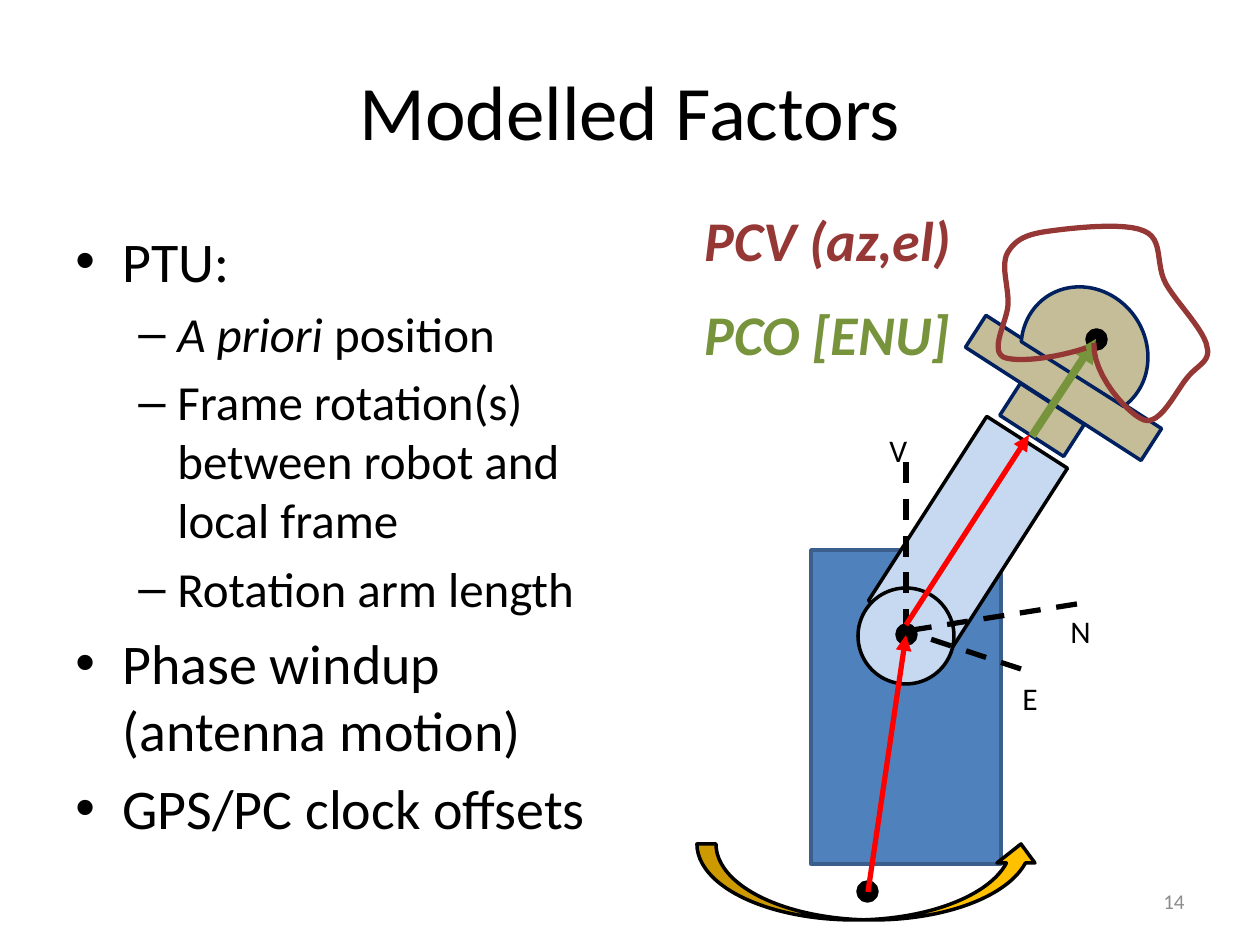
from lxml import etree
from pptx import Presentation
from pptx.dml.color import RGBColor
from pptx.enum.dml import MSO_LINE
from pptx.enum.shapes import MSO_CONNECTOR, MSO_SHAPE
from pptx.enum.text import MSO_ANCHOR, PP_ALIGN
from pptx.oxml.ns import qn
from pptx.util import Pt

PX = 914400 / 126
FONT = "Calibri"
RECT, ELLIPSE = MSO_SHAPE.RECTANGLE, MSO_SHAPE.OVAL
CHORD, TURN = MSO_SHAPE.CHORD, MSO_SHAPE.CURVED_UP_ARROW
STRAIGHT, DASH = MSO_CONNECTOR.STRAIGHT, MSO_LINE.DASH
LEFT, CENTER, RIGHT = PP_ALIGN.LEFT, PP_ALIGN.CENTER, PP_ALIGN.RIGHT
TOP, MIDDLE = MSO_ANCHOR.TOP, MSO_ANCHOR.MIDDLE

BLACK, RED, GREEN, MAROON = "000000", "FF0000", "77933C", "953735"
PALE, TAN, NAVY = "C6D9F1", "C4BD97", "002060"
DOT = 19

FACTORS = [
    (0, [("PTU:", False)]),
    (1, [("A priori", True), (" position", False)]),
    (1, [("Frame rotation(s) between robot and local frame", False)]),
    (1, [("Rotation arm length", False)]),
    (0, [("Phase windup (antenna motion)", False)]),
    (0, [("GPS/PC clock offsets", False)]),
]
LEVELS = [
    {"bullet": "•", "size": 32, "margin": 47, "hang": 47},
    {"bullet": "–", "size": 28, "margin": 102, "hang": 39},
]

ROBOT = [
    (ELLIPSE, (858, 882, DOT, DOT), 0, BLACK, BLACK),
    (RECT, (811, 550, 190, 314), 0, "4F81BD", "3A5F8C"),
    (RECT, (920, 425, 96, 219), 32.7, PALE, BLACK),
    (ELLIPSE, (858, 588, 96, 96), 0, PALE, BLACK),
    (ELLIPSE, (897, 625, DOT, DOT), 0, BLACK, BLACK),
    (TURN, (697, 844, 343, 76), 0, "FFC000", BLACK),
]
ORIGIN = (906, 631)
AXES = [
    ("V", (906, 462), (877, 425)),
    ("N", (1077, 604), (1058, 606)),
    ("E", (1021, 669), (1010, 673)),
]
ANTENNA = [
    (RECT, (959, 369, 209, 38), 32.8, TAN, NAVY),
    (RECT, (1004, 401, 76, 38), 32.8, TAN, NAVY),
    (CHORD, (1023, 285, 123, 134), 144.3, TAN, NAVY),
    (ELLIPSE, (1087, 330, DOT, DOT), 0, BLACK, BLACK),
]
VECTORS = [
    ((868, 892), (906, 635), RED, 3),
    ((906, 625), (1029, 435), RED, 3),
    ((1032, 436), (1096, 339), GREEN, 4.5),
]
PATTERN_START = (1086, 348)
PATTERN_CURVES = [
    ((1056, 358), (1017, 363), (1003, 357)),
    ((990, 349), (1007, 321), (1008, 305)),
    ((1009, 287), (1000, 265), (1008, 252)),
    ((1016, 239), (1027, 234), (1050, 231)),
    ((1072, 228), (1125, 222), (1144, 231)),
    ((1164, 239), (1155, 265), (1166, 284)),
    ((1176, 302), (1205, 331), (1207, 347)),
    ((1211, 362), (1197, 365), (1187, 378)),
    ((1176, 391), (1160, 426), (1144, 420)),
    ((1129, 415), (1092, 375), (1094, 343)),
]
CORRECTIONS = [
    ("PCV (az,el)", (692, 199, 282, 79), MAROON),
    ("PCO [ENU]", (692, 293, 282, 79), GREEN),
]


def emu(*lengths):
    return [round(length * PX) for length in lengths]


def color(code):
    return RGBColor.from_string(code)


def add_run(paragraph, words, size, code, bold=False, italic=False):
    run = paragraph.add_run()
    run.text = words
    run.font.name, run.font.size = FONT, Pt(size)
    run.font.bold, run.font.italic = bold, italic
    run.font.color.rgb = color(code)


def add_frame(box, anchor=TOP):
    frame = slide.shapes.add_textbox(*emu(*box)).text_frame
    frame.word_wrap, frame.vertical_anchor = True, anchor
    return frame


def add_label(words, box, size, code=BLACK, align=LEFT, anchor=TOP, strong=False):
    paragraph = add_frame(box, anchor).paragraphs[0]
    paragraph.alignment = align
    add_run(paragraph, words, size, code, strong, strong)
    return paragraph


def add_part(preset, box, angle, fill, outline):
    part = slide.shapes.add_shape(preset, *emu(*box))
    part.shadow.inherit = False
    part.rotation = angle
    part.fill.solid()
    part.fill.fore_color.rgb = color(fill)
    part.line.color.rgb = color(outline)
    part.line.width = Pt(2)


def add_line(start, end, code, width, dashed=False):
    connector = slide.shapes.add_connector(STRAIGHT, *emu(*start, *end))
    connector.line.color.rgb = color(code)
    connector.line.width = Pt(width)
    if dashed:
        connector.line.dash_style = DASH
    else:
        outline = connector.line._get_or_add_ln()
        etree.SubElement(outline, qn("a:tailEnd"), type="triangle")
    etree.SubElement(connector._element.spPr, qn("a:effectLst"))


def curve_points(start, curves, steps=12):
    for first, second, end in curves:
        for step in range(1, steps + 1):
            t = step / steps
            weights = ((1 - t) ** 3, 3 * t * (1 - t) ** 2, 3 * t * t * (1 - t), t ** 3)
            corners = (start, first, second, end)
            yield emu(*(sum(w * c[axis] for w, c in zip(weights, corners)) for axis in (0, 1)))
        start = end


def add_pattern():
    builder = slide.shapes.build_freeform(*emu(*PATTERN_START))
    builder.add_line_segments(list(curve_points(PATTERN_START, PATTERN_CURVES)), close=False)
    pattern = builder.convert_to_shape()
    pattern.shadow.inherit = False
    pattern.fill.background()
    pattern.line.color.rgb = color(MAROON)
    pattern.line.width = Pt(3)


def add_factors():
    frame = add_frame((63, 220, 598, 624))
    for index, (depth, pieces) in enumerate(FACTORS):
        level = LEVELS[depth]
        paragraph = frame.add_paragraph() if index else frame.paragraphs[0]
        paragraph.level = depth
        if index:
            paragraph.space_before = Pt(level["size"] * 0.2)
        properties = paragraph._p.get_or_add_pPr()
        margin, hang = emu(level["margin"], level["hang"])
        properties.set("marL", str(margin))
        properties.set("indent", str(-hang))
        etree.SubElement(properties, qn("a:buFont"), typeface="Arial")
        etree.SubElement(properties, qn("a:buChar"), char=level["bullet"])
        for words, italic in pieces:
            add_run(paragraph, words, level["size"], BLACK, italic=italic)


deck = Presentation()
deck.slide_width, deck.slide_height = emu(1260, 945)
slide = deck.slides.add_slide(deck.slide_layouts[6])

title = add_label("Modelled Factors", (63, 38, 1134, 157), 44, align=CENTER, anchor=MIDDLE)
title.line_spacing = 0.87
add_factors()
for part in ROBOT:
    add_part(*part)
for axis, tip, corner in AXES:
    add_line(tip, ORIGIN, BLACK, 3, dashed=True)
    add_label(axis, (*corner, 48, 49), 18)
for part in ANTENNA:
    add_part(*part)
for vector in VECTORS:
    add_line(*vector)
add_pattern()
for words, box, code in CORRECTIONS:
    add_label(words, box, 32, code, strong=True)
add_label("14", (903, 876, 294, 50), 12, "8C8C8C", RIGHT, MIDDLE)

deck.save("out.pptx")
